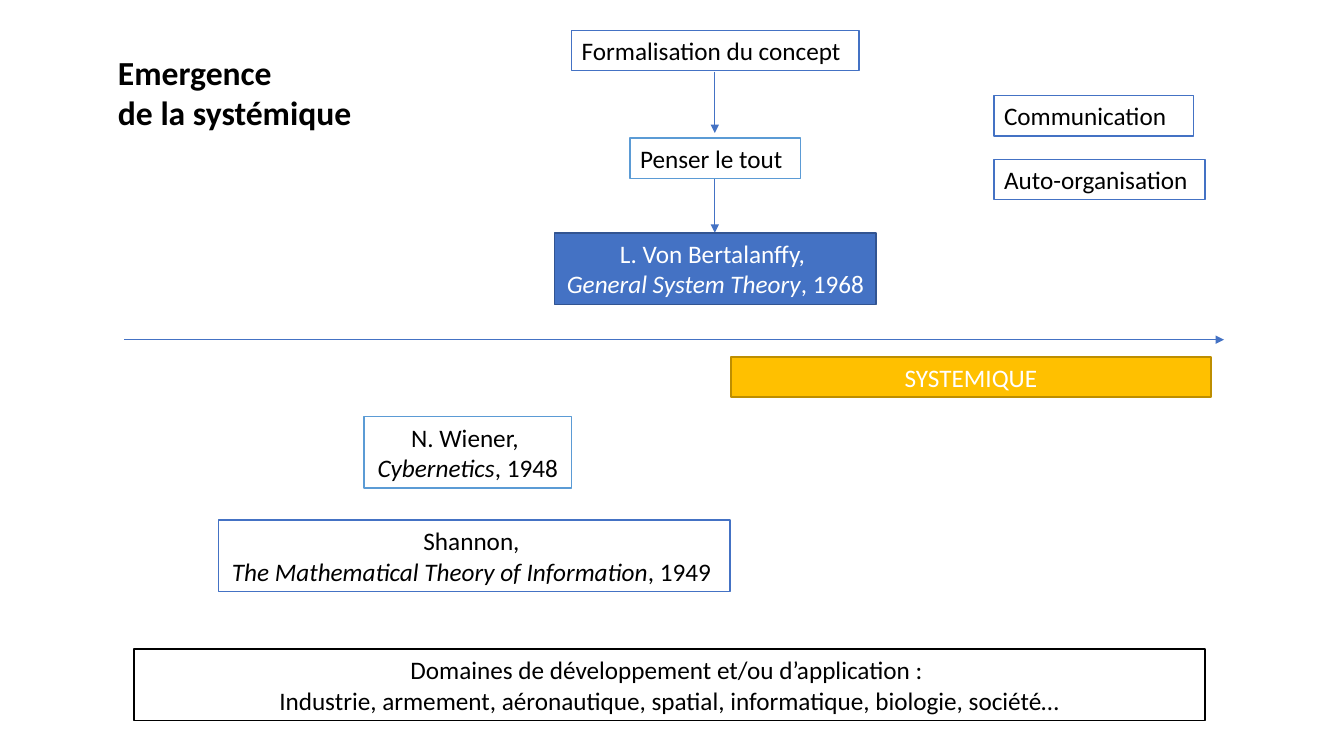
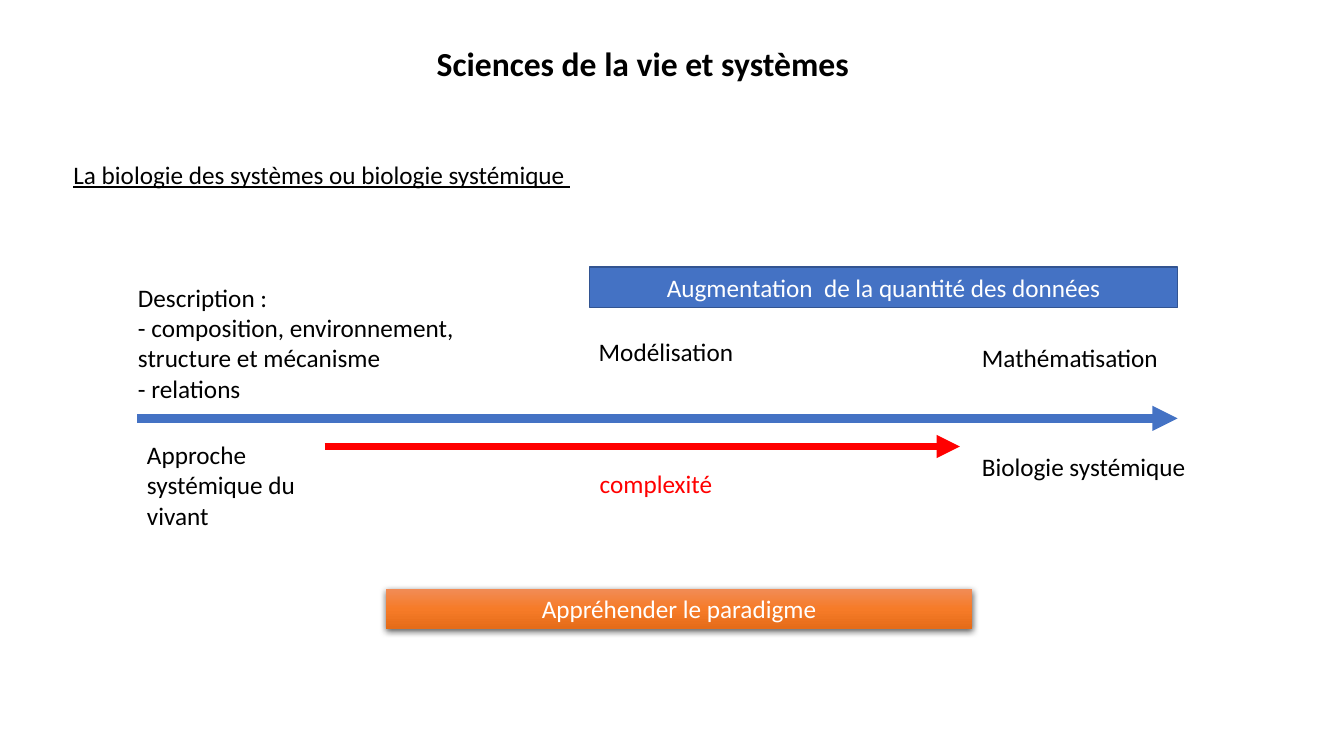
from lxml.etree import SubElement
from copy import deepcopy
from pptx import Presentation
from pptx.dml.color import RGBColor
from pptx.enum.shapes import MSO_CONNECTOR, MSO_SHAPE
from pptx.enum.text import MSO_ANCHOR, MSO_AUTO_SIZE, PP_ALIGN
from pptx.oxml.ns import qn
from pptx.util import Inches, Pt

BLUE, DARK_BLUE, LIGHT_BLUE = "4472C4", "325491", "5B9BD5"
GOLD, DARK_GOLD = "FFC000", "BD8E00"
BLACK, WHITE, RED = "000000", "FFFFFF", "FF0000"
ORANGE_GRADIENT = [(0, "F18C57"), (0.5, "F67B28"), (1, "E56C19")]

BODY_FONT = {"name": "Calibri", "size": Pt(18)}
TITLE_FONT = {"name": "Calibri", "size": Pt(24), "bold": True}
ITALIC = {"italic": True}
ONE_LINE, TWO_LINES = 0.4, 0.71
LEFT, CENTER = PP_ALIGN.LEFT, PP_ALIGN.CENTER


def color(hex_value):
    """Return the RGB colour for a hex string."""
    return RGBColor.from_string(hex_value)


def apply(target, values):
    """Set each attribute named in values on the target."""
    for name, value in values.items():
        setattr(target, name, value)


def write(shape, paragraphs, font, ink=BLACK, align=LEFT, anchor=MSO_ANCHOR.TOP):
    """Write paragraphs, each a string or a list of (text, format) runs."""
    frame = shape.text_frame
    apply(frame, {"word_wrap": True, "auto_size": MSO_AUTO_SIZE.NONE,
                  "vertical_anchor": anchor})
    for index, content in enumerate(paragraphs):
        paragraph = frame.add_paragraph() if index else frame.paragraphs[0]
        paragraph.alignment = align
        runs = [(content, {})] if isinstance(content, str) else content
        for text, extra in runs:
            run = paragraph.add_run()
            run.text = text
            apply(run.font, {**font, **extra})
            run.font.color.rgb = color(ink)


def add_titled_slide(presentation, paragraphs, place, align):
    """Add a slide whose title placeholder sits at the given place."""
    slide = presentation.slides.add_slide(presentation.slide_layouts[5])
    title = slide.shapes.title
    apply(title, dict(zip(("left", "top", "width", "height"), map(Inches, place))))
    write(title, paragraphs, TITLE_FONT, align=align)
    return slide


def add_label(slide, place, paragraphs, ink=BLACK, align=LEFT, **extra):
    """Add plain text without a frame."""
    label = slide.shapes.add_textbox(*map(Inches, place))
    write(label, paragraphs, {**BODY_FONT, **extra}, ink, align)


def add_box(slide, place, paragraphs, fill=WHITE, border=BLUE, ink=BLACK, align=CENTER):
    """Add a rectangle with text, outlined unless border is None."""
    box = slide.shapes.add_shape(MSO_SHAPE.RECTANGLE, *map(Inches, place))
    box.shadow.inherit = False
    box.fill.solid()
    box.fill.fore_color.rgb = color(fill)
    if border:
        box.line.color.rgb = color(border)
        box.line.width = Pt(1)
    else:
        box.line.fill.background()
    write(box, paragraphs, BODY_FONT, ink, align, MSO_ANCHOR.MIDDLE)
    return box


def add_gradient(shape, stops):
    """Fill the shape from top to bottom through three colour stops."""
    shape.fill.gradient()
    shape.fill.gradient_angle = 270
    stop_list = shape.element.spPr.find(qn("a:gradFill")).find(qn("a:gsLst"))
    stop_list.insert(1, deepcopy(stop_list[0]))
    for stop, (position, hex_value) in zip(shape.fill.gradient_stops, stops):
        stop.position = position
        stop.color.rgb = color(hex_value)


def add_shadow(shape):
    """Give the shape a soft black shadow below it."""
    effects = shape.element.spPr.find(qn("a:effectLst"))
    shadow = SubElement(effects, qn("a:outerShdw"), blurRad=str(Pt(4.5)),
                        dist=str(Pt(1.5)), dir="5400000", rotWithShape="0")
    ink = SubElement(shadow, qn("a:srgbClr"), val=BLACK)
    SubElement(ink, qn("a:alpha"), val="63000")


def add_arrow(slide, start, end, hex_value=BLUE, width=0.5):
    """Add a straight arrow that points at end."""
    arrow = slide.shapes.add_connector(
        MSO_CONNECTOR.STRAIGHT, *map(Inches, (*start, *end)))
    arrow.line.color.rgb = color(hex_value)
    arrow.line.width = Pt(width)
    properties = arrow.element.spPr
    SubElement(properties.find(qn("a:ln")), qn("a:tailEnd"), type="triangle")
    SubElement(properties, qn("a:effectLst"))


def build_emergence(presentation):
    """Build the timeline of the emergence of systems thinking."""
    slide = add_titled_slide(presentation, ["Emergence", "de la systémique"],
                             (1.07, 0.46, 2.54, 0.91), LEFT)
    add_arrow(slide, (1.23, 3.37), (12.14, 3.37))
    for top, bottom in ((0.71, 1.32), (1.78, 2.31)):
        add_arrow(slide, (7.09, top), (7.09, bottom))

    concepts = [
        (5.67, 0.3, 2.85, "Formalisation du concept", BLUE),
        (6.25, 1.37, 1.69, "Penser le tout", LIGHT_BLUE),
        (9.86, 0.95, 1.98, "Communication", BLUE),
        (9.86, 1.58, 2.09, "Auto-organisation", BLUE),
    ]
    for left, top, width, text, border in concepts:
        add_box(slide, (left, top, width, ONE_LINE), [text], border=border, align=LEFT)

    works = [
        (5.5, 2.31, 3.19, "L. Von Bertalanffy, ", "General System Theory", ", 1968",
         (BLUE, DARK_BLUE, WHITE)),
        (3.61, 4.13, 2.06, "N. Wiener, ", "Cybernetics", ", 1948",
         (WHITE, LIGHT_BLUE, BLACK)),
        (2.17, 5.16, 5.07, "Shannon, ", "The Mathematical Theory of Information", ", 1949 ",
         (WHITE, BLUE, BLACK)),
    ]
    for left, top, width, author, work, year, colors in works:
        add_box(slide, (left, top, width, TWO_LINES),
                [author, [(work, ITALIC), (year, {})]], *colors)

    add_box(slide, (7.25, 3.54, 4.76, ONE_LINE), ["SYSTEMIQUE"], GOLD, DARK_GOLD, WHITE)
    add_box(slide, (1.33, 6.44, 10.62, TWO_LINES),
            ["Domaines de développement et/ou d’application : ",
             "Industrie, armement, aéronautique, spatial, informatique, biologie, société…"],
            border=BLACK)


def build_life_sciences(presentation):
    """Build the path from description to systems biology."""
    slide = add_titled_slide(presentation, ["Sciences de la vie et systèmes"],
                             (3.39, 0.38, 5.97, 0.5), CENTER)
    add_label(slide, (0.63, 1.53, 5.22, ONE_LINE),
              ["La biologie des systèmes ou biologie systémique "], underline=True)
    add_label(slide, (1.27, 2.75, 3.79, 1.31),
              ["Description :", "- composition, environnement, structure et mécanisme",
               "- relations"])
    add_label(slide, (1.36, 4.31, 1.86, 1.01), ["Approche systémique du vivant"])
    add_label(slide, (5.06, 3.29, 3.09, ONE_LINE), ["Modélisation"], align=CENTER)
    add_label(slide, (9.64, 3.35, 2.05, ONE_LINE), ["Mathématisation"])
    add_label(slide, (9.64, 4.43, 2.44, ONE_LINE), ["Biologie systémique"])
    add_label(slide, (5.85, 4.6, 1.34, ONE_LINE), ["complexité"], RED)

    add_arrow(slide, (1.36, 4.15), (11.68, 4.15), BLUE, 6)
    add_arrow(slide, (3.22, 4.43), (9.52, 4.43), RED, 5.5)

    add_box(slide, (5.85, 2.65, 5.83, ONE_LINE),
            ["Augmentation  de la quantité des données"], BLUE, DARK_BLUE, WHITE)
    paradigm = add_box(slide, (3.83, 5.84, 5.81, ONE_LINE),
                       ["Appréhender le paradigme"], border=None, ink=WHITE)
    add_gradient(paradigm, ORANGE_GRADIENT)
    add_shadow(paradigm)


def main():
    """Build and save the presentation."""
    presentation = Presentation()
    apply(presentation, {"slide_width": Inches(13.33), "slide_height": Inches(7.5)})
    build_emergence(presentation)
    build_life_sciences(presentation)
    presentation.save("out.pptx")


if __name__ == "__main__":
    main()
